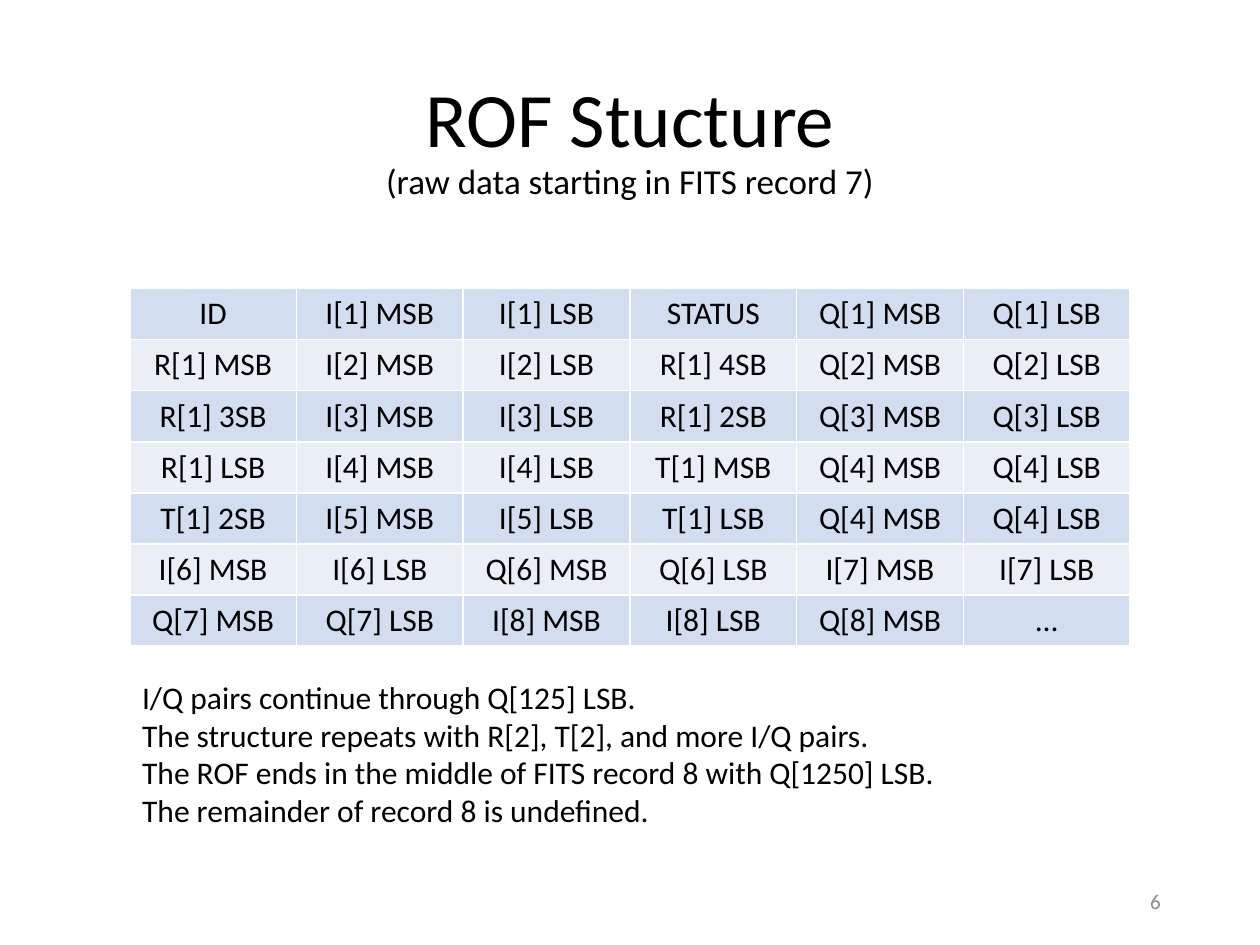
from dataclasses import dataclass
from itertools import cycle

from lxml.etree import SubElement
from pptx import Presentation
from pptx.dml.color import RGBColor
from pptx.enum.text import MSO_ANCHOR, PP_ALIGN
from pptx.oxml.ns import qn
from pptx.util import Inches, Pt


@dataclass(frozen=True)
class Theme:
    font: str = "Calibri"
    ink: str = "000000"
    muted: str = "8C8C8C"
    bands: tuple = ("D2DEEF", "EAEFF7")
    rule: str = "FFFFFF"
    rule_width: float = 1
    title: int = 44
    subtitle: int = 20
    body: int = 18
    footer: int = 12


theme = Theme()


def write(frame, text, sizes=(theme.body,), color=theme.ink,
          align=PP_ALIGN.LEFT, anchor=MSO_ANCHOR.TOP, spacing=None):
    """Fill a text frame; sizes apply in turn to the runs of each paragraph."""
    frame.word_wrap = True
    frame.vertical_anchor = anchor
    frame.text = text
    for paragraph in frame.paragraphs:
        paragraph.alignment = align
        paragraph.line_spacing = spacing
        for run, size in zip(paragraph.runs, cycle(sizes)):
            run.font.name = theme.font
            run.font.size = Pt(size)
            run.font.color.rgb = RGBColor.from_string(color)


def add_borders(cell):
    properties = cell._tc.get_or_add_tcPr()
    for side in ("a:lnL", "a:lnR", "a:lnT", "a:lnB"):
        line = SubElement(properties, qn(side), w=str(Pt(theme.rule_width)))
        fill = SubElement(line, qn("a:solidFill"))
        SubElement(fill, qn("a:srgbClr"), val=theme.rule)


presentation = Presentation()
presentation.slide_width, presentation.slide_height = Inches(10), Inches(7.5)
slide = presentation.slides.add_slide(presentation.slide_layouts[6])

# Shared columns: outer margin for title and footer, inner margin for content
margin, inset = Inches(0.69), Inches(1.03)
content_width = presentation.slide_width - 2 * inset

# Title and subtitle, split by a line break
title = slide.shapes.add_textbox(
    margin, Inches(0.4), presentation.slide_width - 2 * margin, Inches(1.45))
write(title.text_frame, "ROF Stucture\v(raw data starting in FITS record 7)",
      sizes=(theme.title, theme.subtitle), align=PP_ALIGN.CENTER,
      anchor=MSO_ANCHOR.MIDDLE, spacing=0.9)

# Byte layout table
records = [
    ["ID", "I[1] MSB", "I[1] LSB", "STATUS", "Q[1] MSB", "Q[1] LSB"],
    ["R[1] MSB", "I[2] MSB", "I[2] LSB", "R[1] 4SB", "Q[2] MSB", "Q[2] LSB"],
    ["R[1] 3SB", "I[3] MSB", "I[3] LSB", "R[1] 2SB", "Q[3] MSB", "Q[3] LSB"],
    ["R[1] LSB", "I[4] MSB", "I[4] LSB", "T[1] MSB", "Q[4] MSB", "Q[4] LSB"],
    ["T[1] 2SB", "I[5] MSB", "I[5] LSB", "T[1] LSB", "Q[4] MSB", "Q[4] LSB"],
    ["I[6] MSB", "I[6] LSB", "Q[6] MSB", "Q[6] LSB", "I[7] MSB", "I[7] LSB"],
    ["Q[7] MSB", "Q[7] LSB", "I[8] MSB", "I[8] LSB", "Q[8] MSB", "…"],
]
table = slide.shapes.add_table(
    len(records), len(records[0]), inset, Inches(2.29),
    content_width, Inches(2.84)).table
table.first_row = table.horz_banding = False
for row, record, band in zip(table.rows, records, cycle(theme.bands)):
    for cell, label in zip(row.cells, record):
        write(cell.text_frame, label, align=PP_ALIGN.CENTER)
        add_borders(cell)
        cell.fill.solid()
        cell.fill.fore_color.rgb = RGBColor.from_string(band)

# Notes below the table
remarks = slide.shapes.add_textbox(
    inset, Inches(5.33), content_width, Inches(1.31))
write(remarks.text_frame, "\n".join([
    "I/Q pairs continue through Q[125] LSB.",
    "The structure repeats with R[2], T[2], and more I/Q pairs.",
    "The ROF ends in the middle of FITS record 8 with Q[1250] LSB.",
    "The remainder of record 8 is undefined.",
]))

# Slide number, flush with the right margin
number_width = Inches(2.25)
number = slide.shapes.add_textbox(
    presentation.slide_width - margin - number_width, Inches(6.95),
    number_width, Inches(0.4))
write(number.text_frame, "6", sizes=(theme.footer,), color=theme.muted,
      align=PP_ALIGN.RIGHT, anchor=MSO_ANCHOR.MIDDLE)

presentation.save("out.pptx")
